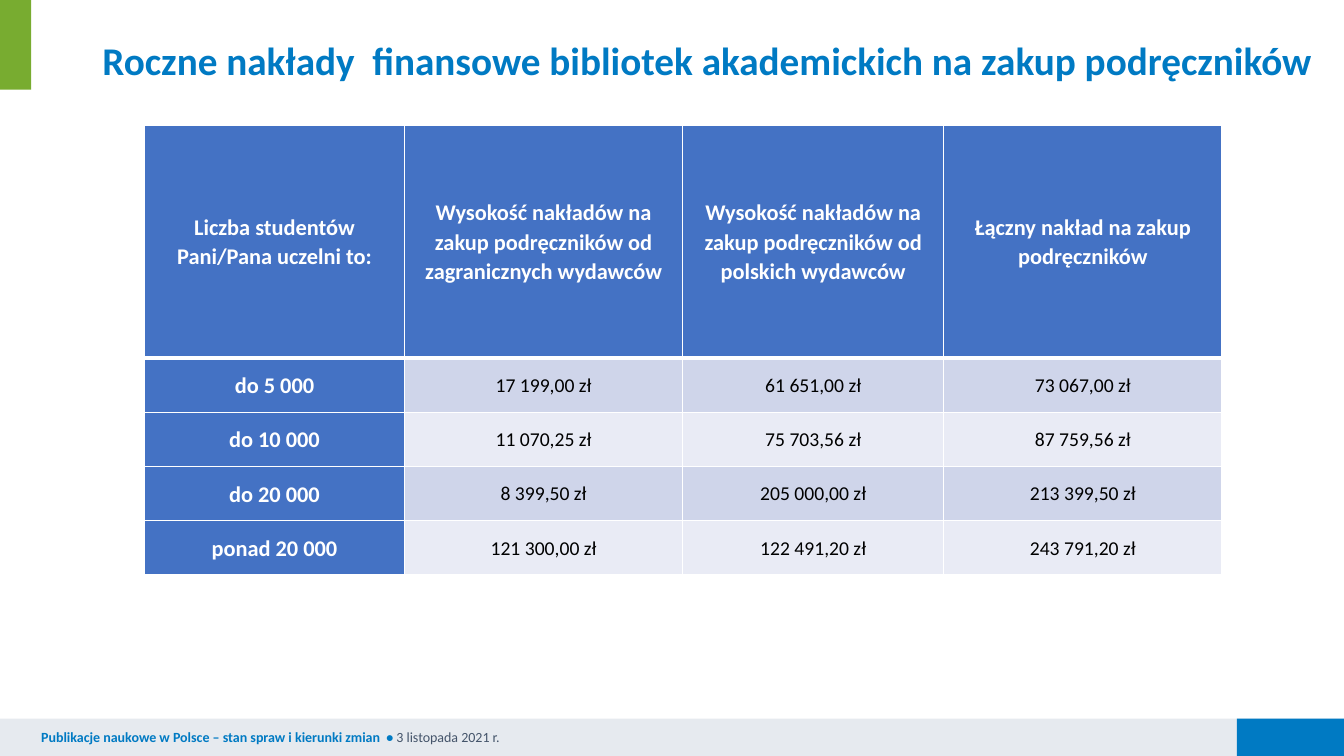
from dataclasses import dataclass

from lxml import etree
from pptx import Presentation
from pptx.dml.color import RGBColor
from pptx.enum.shapes import MSO_SHAPE
from pptx.enum.text import MSO_ANCHOR, MSO_AUTO_SIZE, PP_ALIGN
from pptx.oxml.ns import qn
from pptx.util import Pt

RECT = MSO_SHAPE.RECTANGLE
MIDDLE = MSO_ANCHOR.MIDDLE
LEFT, CENTER = PP_ALIGN.LEFT, PP_ALIGN.CENTER
NO_AUTOSIZE, FIT_SHAPE = MSO_AUTO_SIZE.NONE, MSO_AUTO_SIZE.SHAPE_TO_FIT_TEXT

BLUE = RGBColor(0x00, 0x7A, 0xC3)
GREEN = RGBColor(0x78, 0xAC, 0x30)
PALE_GREY = RGBColor(0xE6, 0xEA, 0xEF)
SLATE = RGBColor(0x44, 0x54, 0x6A)
HEADER_BLUE = RGBColor(0x44, 0x72, 0xC4)
BAND_DARK = RGBColor(0xCF, 0xD5, 0xEA)
BAND_LIGHT = RGBColor(0xE9, 0xEB, 0xF5)
WHITE = RGBColor(0xFF, 0xFF, 0xFF)
BLACK = RGBColor(0x00, 0x00, 0x00)


@dataclass(frozen=True)
class Bar:
    left: float
    top: float
    width: float
    height: float
    color: RGBColor


@dataclass(frozen=True)
class TextFormat:
    size: float
    color: RGBColor
    bold: bool


BARS = [
    Bar(0, 513.4, 960, 26.6, PALE_GREY),
    Bar(0, 0, 22.3, 64, GREEN),
    Bar(883.5, 513.4, 76.5, 26.6, BLUE),
]
TITLE_FORMAT = TextFormat(28, BLUE, True)
HEADING_FORMAT = TextFormat(16, WHITE, True)
VALUE_FORMAT = TextFormat(14, BLACK, False)
FOOTER = [
    ("Publikacje naukowe w Polsce – stan spraw i kierunki zmian  • ", TextFormat(10, BLUE, True)),
    ("3 listopada 2021 r.", TextFormat(10, SLATE, False)),
]
COLUMN_WIDTHS = [185.8, 198.7, 186.5, 198.7]
HEADER_HEIGHT, ROW_HEIGHT = 166.2, 38.7
SPENDING = [
    ["Liczba studentów Pani/Pana uczelni to:",
     "Wysokość nakładów na zakup podręczników od zagranicznych wydawców",
     "Wysokość nakładów na zakup podręczników od polskich wydawców",
     "Łączny nakład na zakup podręczników"],
    ["do 5 000", "17 199,00 zł", "61 651,00 zł", "73 067,00 zł"],
    ["do 10 000", "11 070,25 zł", "75 703,56 zł", "87 759,56 zł"],
    ["do 20 000", "8 399,50 zł", "205 000,00 zł", "213 399,50 zł"],
    ["ponad 20 000", "121 300,00 zł", "122 491,20 zł", "243 791,20 zł"],
]


def set_attributes(target, values: dict) -> None:
    for name, value in values.items():
        setattr(target, name, value)


def add_run(p, text: str, fmt: TextFormat) -> None:
    r = p.add_run()
    r.text = text
    set_attributes(r.font, {"name": "Calibri", "size": Pt(fmt.size), "bold": fmt.bold})
    r.font.color.rgb = fmt.color


def add_bar(s, bar: Bar) -> None:
    sp = s.shapes.add_shape(RECT, Pt(bar.left), Pt(bar.top), Pt(bar.width), Pt(bar.height))
    sp.shadow.inherit = False
    sp.fill.solid()
    sp.fill.fore_color.rgb = bar.color
    sp.line.fill.background()


def add_footer(s) -> None:
    sp = s.shapes.add_textbox(Pt(22.3), Pt(517), Pt(671.8), Pt(19.4))
    tf = sp.text_frame
    set_attributes(tf, {"word_wrap": True, "auto_size": FIT_SHAPE})
    for text, fmt in FOOTER:
        add_run(tf.paragraphs[0], text, fmt)


def fill_title(s, text: str) -> None:
    sp = s.shapes.title
    set_attributes(sp, {"left": Pt(66), "top": Pt(26), "width": Pt(894), "height": Pt(38)})
    tf = sp.text_frame
    set_attributes(tf, {"word_wrap": True, "auto_size": NO_AUTOSIZE, "vertical_anchor": MIDDLE})
    p = tf.paragraphs[0]
    set_attributes(p, {"alignment": LEFT, "line_spacing": 0.9})
    add_run(p, text, TITLE_FORMAT)


def add_border(cell, side: str, width: float) -> None:
    tcPr = cell._tc.get_or_add_tcPr()
    ln = etree.SubElement(tcPr, qn(f"a:ln{side}"), w=str(Pt(width)))
    fill = etree.SubElement(ln, qn("a:solidFill"))
    etree.SubElement(fill, qn("a:srgbClr"), val=str(WHITE))


def fill_cell(cell, row: int, column: int, text: str) -> None:
    heading = row == 0 or column == 0
    band = BAND_DARK if row % 2 else BAND_LIGHT
    widths = {"L": 1, "R": 1, "T": 3 if row == 1 else 1, "B": 3 if row == 0 else 1}
    for side, width in widths.items():
        add_border(cell, side, width)
    cell.fill.solid()
    cell.fill.fore_color.rgb = HEADER_BLUE if heading else band
    set_attributes(cell, {"vertical_anchor": MIDDLE, "margin_left": Pt(5), "margin_right": Pt(5),
                          "margin_top": Pt(0), "margin_bottom": Pt(0)})
    p = cell.text_frame.paragraphs[0]
    set_attributes(p, {"alignment": CENTER, "line_spacing": 1.07})
    add_run(p, text, HEADING_FORMAT if heading else VALUE_FORMAT)


def add_spending_table(s) -> None:
    heights = [HEADER_HEIGHT] + [ROW_HEIGHT] * (len(SPENDING) - 1)
    table = s.shapes.add_table(len(heights), len(COLUMN_WIDTHS), Pt(103.2), Pt(89.5),
                               Pt(sum(COLUMN_WIDTHS)), Pt(sum(heights))).table
    table.first_col = True
    for column, width in zip(table.columns, COLUMN_WIDTHS):
        column.width = Pt(width)
    for i, (height, texts) in enumerate(zip(heights, SPENDING)):
        table.rows[i].height = Pt(height)
        for j, text in enumerate(texts):
            fill_cell(table.cell(i, j), i, j, text)


def main() -> None:
    prs = Presentation()
    set_attributes(prs, {"slide_width": Pt(960), "slide_height": Pt(540)})
    s = prs.slides.add_slide(prs.slide_layouts[5])
    for bar in BARS:
        add_bar(s, bar)
    add_footer(s)
    add_spending_table(s)
    fill_title(s, "Roczne nakłady  finansowe bibliotek akademickich na zakup podręczników")
    prs.save("out.pptx")


if __name__ == "__main__":
    main()
